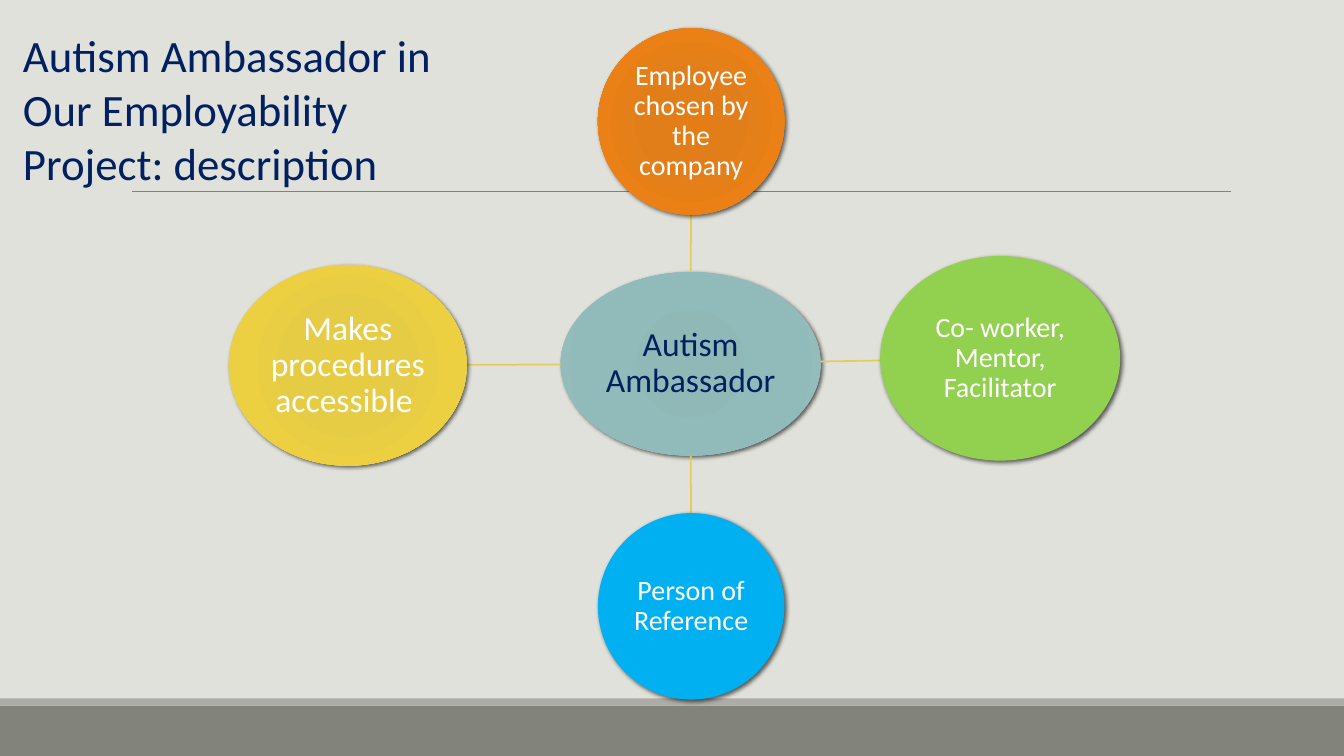
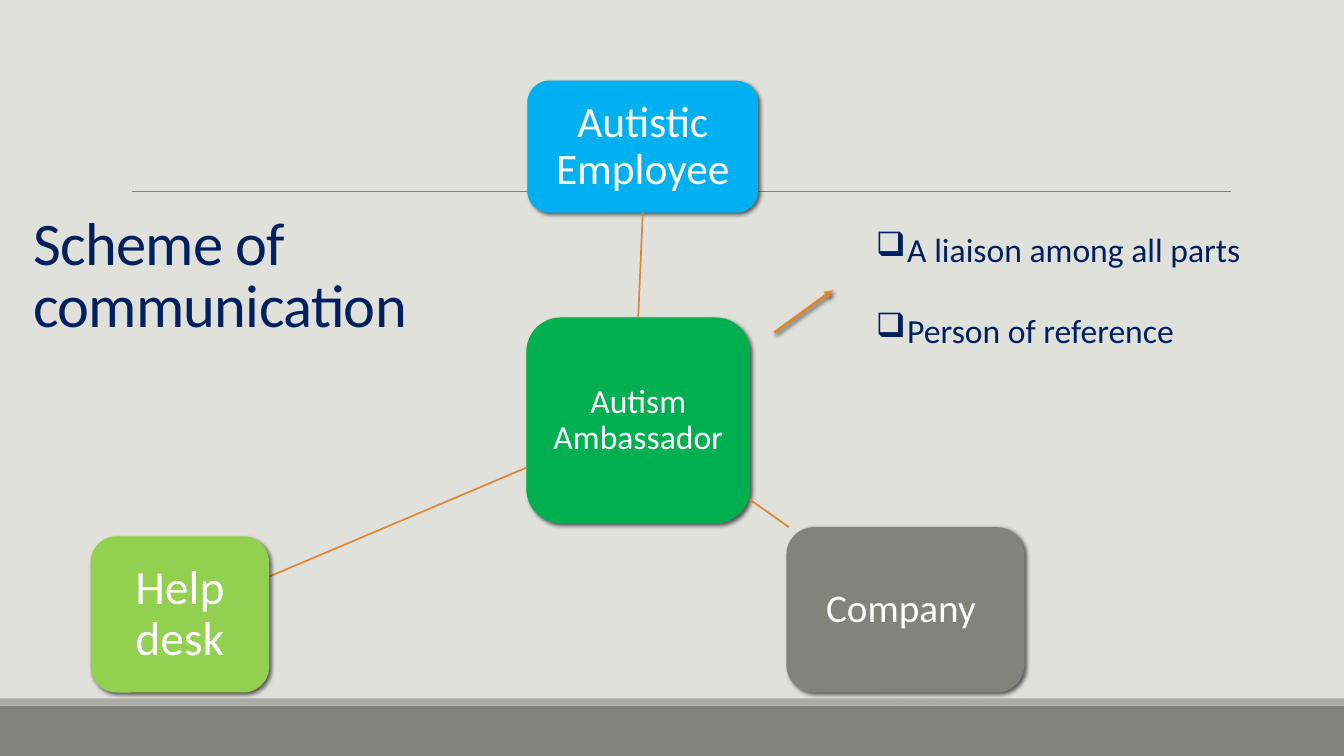
from math import hypot

from pptx import Presentation
from pptx.dml.color import RGBColor
from pptx.enum.shapes import MSO_CONNECTOR, MSO_SHAPE
from pptx.enum.text import MSO_ANCHOR, PP_ALIGN
from pptx.oxml import parse_xml
from pptx.oxml.ns import nsdecls, qn
from pptx.util import Inches, Pt

ELLIPSE, ROUNDED, RECTANGLE = MSO_SHAPE.OVAL, MSO_SHAPE.ROUNDED_RECTANGLE, MSO_SHAPE.RECTANGLE
STRAIGHT = MSO_CONNECTOR.STRAIGHT
TOP, MIDDLE, BOTTOM = MSO_ANCHOR.TOP, MSO_ANCHOR.MIDDLE, MSO_ANCHOR.BOTTOM
CENTER = PP_ALIGN.CENTER
TOP_SIDE, BOTTOM_SIDE = 0, 2

WIDTH, HEIGHT = 13.33, 7.5
FONT = "Calibri"


def color(code):
    return RGBColor.from_string(code)


BACKGROUND, BAND, BAND_EDGE, RULE = map(color, ("E1E1DB", "82847C", "ACADA8", "808080"))
NAVY, WHITE = color("002060"), color("FFFFFF")
SKY, LIME, GREEN = color("00B0F0"), color("92D050"), color("00B050")
GOLD_LINE, ORANGE_LINE, ARROW = color("E3CC5A"), color("DB8839"), color("DB8631")
# Radial fills: colours at the stops below
STOPS = (0, 34, 70, 100)
TEAL = tuple(map(color, ("8EB7B6", "90B8B7", "91BBBA", "9BC1C0")))
ORANGE = tuple(map(color, ("E47D16", "E27E1A", "EA8016", "E48629")))
YELLOW = tuple(map(color, ("E7CB41", "E6CB45", "ECD042", "EAD153")))

# Nodes: text, (left, top, width, height), fill, text size, text colour, inset
ROLE_HUB = ("Autism Ambassador", (5.56, 2.7, 2.58, 1.82), TEAL, 24, NAVY, 0.02)
ROLES = [
    ("Employee chosen by the company", (5.93, 0.28, 1.85, 1.85), ORANGE, 20, WHITE, 0.01),
    ("Co- worker, Mentor, Facilitator", (8.73, 2.54, 2.38, 2.03), LIME, 20, WHITE, 0.01),
    ("Person of Reference", (5.93, 5.09, 1.85, 1.85), SKY, 20, WHITE, 0.01),
    ("Makes procedures accessible ", (2.27, 2.63, 2.36, 1.99), YELLOW, 24, WHITE, 0.02),
]
CONTACT_HUB = ("Autism Ambassador", (5.22, 3.15, 2.22, 2.04), GREEN, 24, WHITE, 0.07)
EMPLOYEE = ("Autistic Employee", (5.23, 0.8, 2.29, 1.31), SKY, 31, WHITE, 0.09)
CONTACTS = [
    ("Company ", (7.8, 5.23, 2.36, 1.64), BAND, 28, WHITE, 0.08),
    ("Help desk", (0.9, 5.32, 1.77, 1.55), LIME, 34, WHITE, 0.09),
]
DUTIES = ["A liaison among all parts", "Person of reference"]


def add_shadow(shape):
    shape._element.spPr.append(parse_xml(
        f'<a:effectLst {nsdecls("a")}><a:outerShdw blurRad="38100" dist="25400" dir="2700000" '
        'rotWithShape="0"><a:srgbClr val="000000"><a:alpha val="60000"/></a:srgbClr>'
        '</a:outerShdw></a:effectLst>'))


def fill_shape(shape, fill):
    """Fill with one colour, or radially with a tuple of colours."""
    if isinstance(fill, RGBColor):
        shape.fill.solid()
        shape.fill.fore_color.rgb = fill
        return
    shape.fill.gradient()
    stops = "".join(f'<a:gs pos="{stop * 1000}"><a:srgbClr val="{shade}"/></a:gs>'
                    for stop, shade in zip(STOPS, fill))
    properties = shape._element.spPr
    properties.replace(properties.find(qn("a:gradFill")), parse_xml(
        f'<a:gradFill {nsdecls("a")} rotWithShape="1"><a:gsLst>{stops}</a:gsLst><a:path path="circle">'
        '<a:fillToRect l="100000" t="100000" r="100000" b="100000"/></a:path></a:gradFill>'))


def add_figure(slide, kind, box, fill):
    shape = slide.shapes.add_shape(kind, *map(Inches, box))
    fill_shape(shape, fill)
    shape.line.fill.background()
    return shape


def add_run(paragraph, text, size, text_color):
    run = paragraph.add_run()
    run.text = text
    run.font.name = FONT
    run.font.size = Pt(size)
    run.font.color.rgb = text_color
    return run


def add_text_box(slide, box, anchor=TOP):
    frame = slide.shapes.add_textbox(*map(Inches, box)).text_frame
    frame.word_wrap = True
    frame.vertical_anchor = anchor
    return frame


def add_line(slide, start, end, line_color, width):
    line = slide.shapes.add_connector(STRAIGHT, *map(Inches, (*start, *end)))
    line.line.color.rgb = line_color
    line.line.width = Pt(width)
    return line


def add_flat_line(slide, start, end, line_color, width):
    line = add_line(slide, start, end, line_color, width)
    line._element.spPr.append(parse_xml(f'<a:effectLst {nsdecls("a")}/>'))
    return line


def add_node(slide, kind, node):
    text, box, fill, size, text_color, inset = node
    shape = add_figure(slide, kind, box, fill)
    add_shadow(shape)
    frame = shape.text_frame
    frame.word_wrap = True
    frame.vertical_anchor = MIDDLE
    frame.margin_left = frame.margin_right = frame.margin_top = frame.margin_bottom = Inches(inset)
    paragraph = frame.paragraphs[0]
    paragraph.alignment = CENTER
    paragraph.line_spacing = 0.9
    add_run(paragraph, text, size, text_color)
    return shape


def center_of(box):
    left, top, width, height = box
    return left + width / 2, top + height / 2


def edge_point(kind, box, target):
    """Where the line from the centre of box to target leaves the outline."""
    x, y = center_of(box)
    dx, dy = target[0] - x, target[1] - y
    across, down = abs(dx) / (box[2] / 2), abs(dy) / (box[3] / 2)
    reach = hypot(across, down) if kind == ELLIPSE else max(across, down)
    return x + dx / reach, y + dy / reach


def add_spoke(slide, kind, hub_box, box, line_color):
    start = edge_point(kind, hub_box, center_of(box))
    end = edge_point(kind, box, center_of(hub_box))
    return add_flat_line(slide, start, end, line_color, 1.25)


def add_base_slide(presentation):
    slide = presentation.slides.add_slide(presentation.slide_layouts[6])
    for box, fill in (((0, 7, WIDTH, 0.5), BAND), ((0, 6.93, WIDTH, 0.07), BAND_EDGE)):
        add_figure(slide, RECTANGLE, box, fill).shadow.inherit = False
    add_flat_line(slide, (1.31, 1.9), (12.21, 1.9), RULE, 0.5)
    return slide


def add_title(slide, text, box, size, anchor=TOP, line_spacing=1.0, tracking=0):
    paragraph = add_text_box(slide, box, anchor).paragraphs[0]
    paragraph.line_spacing = line_spacing
    run = add_run(paragraph, text, size, NAVY)
    run._r.get_or_add_rPr().set("spc", str(tracking))


def add_duties(slide, box):
    frame = add_text_box(slide, box)
    for index, duty in enumerate(DUTIES):
        paragraph = frame.add_paragraph() if index else frame.paragraphs[0]
        paragraph.space_before = Pt(29 if index else 0)
        properties = paragraph._p.get_or_add_pPr()
        properties.set("marL", str(Inches(0.31)))
        properties.set("indent", str(-Inches(0.31)))
        properties.append(parse_xml(f'<a:buChar {nsdecls("a")} char="❑"/>'))
        add_run(paragraph, duty, 24, NAVY)


def build_description(presentation):
    slide = add_base_slide(presentation)
    add_node(slide, ELLIPSE, ROLE_HUB)
    for role in ROLES:
        add_spoke(slide, ELLIPSE, ROLE_HUB[1], role[1], GOLD_LINE)
        add_node(slide, ELLIPSE, role)
    add_title(slide, "Autism Ambassador in Our Employability Project: description",
              (0.13, 0.23, 4.67, 1.72), 32)


def build_scheme(presentation):
    slide = add_base_slide(presentation)
    add_title(slide, "Scheme of communication", (0.23, 1.83, 3.96, 1.59), 43.2, BOTTOM, 0.85, -50)
    hub = add_node(slide, ROUNDED, CONTACT_HUB)
    employee = add_node(slide, ROUNDED, EMPLOYEE)
    spoke = add_spoke(slide, ROUNDED, CONTACT_HUB[1], EMPLOYEE[1], ORANGE_LINE)
    spoke.begin_connect(hub, TOP_SIDE)
    spoke.end_connect(employee, BOTTOM_SIDE)
    for contact in CONTACTS:
        add_spoke(slide, ROUNDED, CONTACT_HUB[1], contact[1], ORANGE_LINE)
        add_node(slide, ROUNDED, contact)
    arrow = add_line(slide, (7.68, 3.3), (8.26, 2.88), ARROW, 2)
    arrow.line._get_or_add_ln().append(parse_xml(f'<a:tailEnd {nsdecls("a")} type="triangle"/>'))
    add_shadow(arrow)
    add_duties(slide, (8.59, 2.22, 3.96, 1.31))


def main():
    presentation = Presentation()
    presentation.slide_width, presentation.slide_height = Inches(WIDTH), Inches(HEIGHT)
    background = presentation.slide_master.background.fill
    background.solid()
    background.fore_color.rgb = BACKGROUND
    build_description(presentation)
    build_scheme(presentation)
    presentation.save("out.pptx")


if __name__ == "__main__":
    main()
